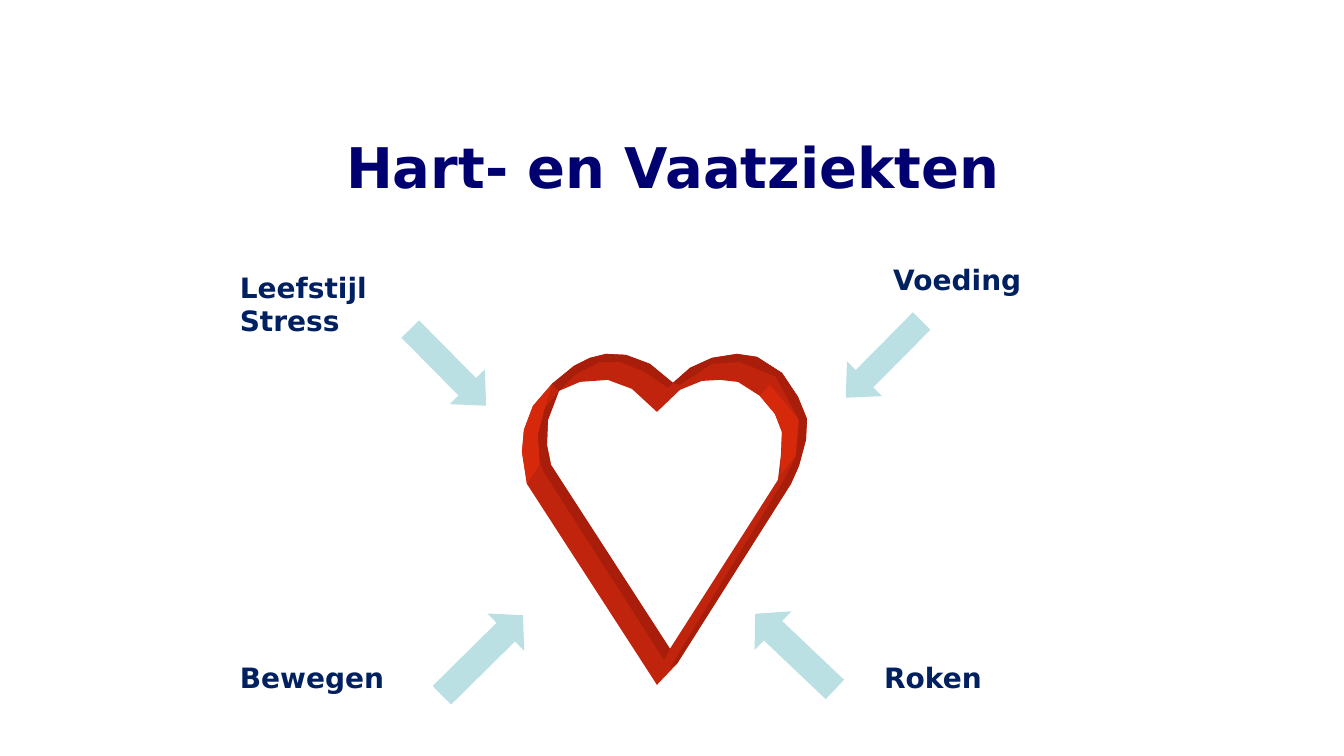
from pptx import Presentation
from pptx.dml.color import RGBColor
from pptx.enum.shapes import MSO_SHAPE
from pptx.enum.text import MSO_ANCHOR, MSO_AUTO_SIZE, PP_ALIGN
from pptx.util import Inches, Pt

deck = Presentation()
deck.slide_width, deck.slide_height = Inches(13.33), Inches(7.5)
CELL = Inches(0.1)  # grid of 133 columns by 75 rows
DOT = deck.slide_width / 1344  # fine grid for the heart
slide = deck.slides.add_slide(deck.slide_layouts[5])


def place(*cells):
    return [round(n * CELL) for n in cells]


def color(hue):
    return RGBColor.from_string(hue)


# Title
title = slide.shapes.title
title.left, title.top, title.width, title.height = place(9.2, 9.7, 115, 14.5)
frame = title.text_frame
frame.text = "Hart- en Vaatziekten"
frame.vertical_anchor = MSO_ANCHOR.MIDDLE
frame.auto_size = MSO_AUTO_SIZE.NONE
para = frame.paragraphs[0]
para.alignment, para.line_spacing = PP_ALIGN.CENTER, 0.9
for key, value in {"name": "DejaVu Sans", "size": Pt(40), "bold": True}.items():
    setattr(para.font, key, value)
para.font.color.rgb = color("000070")

# Heart ring: outer edge and hole, then shaded rims and bright sides
outer = [(657, 685), (527, 484), (522, 452), (524, 430), (533, 406), (552, 384),
         (574, 366), (590, 358), (606, 354), (626, 355), (650, 364), (673, 383),
         (690, 368), (712, 358), (737, 354), (757, 357), (782, 373), (798, 397),
         (807, 419), (806, 440), (799, 466), (791, 484), (677, 664)]
hole = [(670, 649), (551, 465), (547, 445), (548, 420), (559, 391), (580, 382),
        (608, 380), (632, 389), (657, 412), (680, 390), (702, 381), (720, 380),
        (738, 382), (760, 396), (775, 414), (782, 432), (781, 455), (778, 480)]
rims = {
    "left": [(559, 391), (545, 408), (538, 435), (540, 464), (545, 474),
             (664, 660)] + hole[:4],
    "top": outer[5:12] + [(668, 388), (645, 372), (620, 362), (600, 362),
                          (575, 375), (559, 391)],
    "right": outer[11:] + [(670, 668), (784, 480), (796, 456), (799, 420),
                           (776, 377), (740, 362), (712, 364), (680, 385)],
}
sides = {
    "left": outer[1:6] + [(545, 408), (538, 435), (540, 464)],
    "right": [(760, 396), (770, 385), (799, 420), (796, 456), (781, 474),
              (782, 432), (775, 414)],
}
parts = [([outer, hole], "C0240C")]
parts += [([side], "D6290C") for side in sides.values()]
parts += [([rim], "A81E0A") for rim in rims.values()]
for loops, hue in parts:
    pen = slide.shapes.build_freeform(*loops[0][0], scale=DOT)
    pen.add_line_segments(loops[0][1:], close=True)
    for loop in loops[1:]:
        pen.move_to(*loop[0])
        pen.add_line_segments(loop[1:], close=True)
    shape = pen.convert_to_shape()
    shape.shadow.inherit = False
    shape.fill.solid()
    shape.fill.fore_color.rgb = color(hue)
    shape.line.fill.background()

# Arrows towards the heart
RIGHT, LEFT = MSO_SHAPE.RIGHT_ARROW, MSO_SHAPE.LEFT_ARROW
arrows = [
    (RIGHT, (39.1, 34, 10.7, 4.9), 45.3, 0.54),
    (LEFT, (82.3, 33.2, 10.7, 4.9), 314.7, 0.54),
    (RIGHT, (42.2, 62.4, 11.3, 5.2), 315.3, 0.46),
    (LEFT, (73.4, 62, 10.9, 5.3), 43.5, 0.46),
]
for kind, cells, turn, head in arrows:
    arrow = slide.shapes.add_shape(kind, *place(*cells))
    arrow.rotation = turn
    arrow.adjustments[1] = head
    arrow.shadow.inherit = False
    arrow.fill.solid()
    arrow.fill.fore_color.rgb = color("BBE0E3")
    arrow.line.fill.background()

# Risk factors
labels = [
    ("Leefstijl\nStress", (22.8, 26.3, 14.9, 7.7), True),
    ("Voeding", (87.6, 25.6, 15.8, 4.4), True),
    ("Bewegen", (22.8, 65, 16.4, 4.4), False),
    ("Roken", (86.7, 65, 12.4, 4.4), True),
]
for text, cells, wrap in labels:
    frame = slide.shapes.add_textbox(*place(*cells)).text_frame
    frame.text = text
    frame.word_wrap = wrap
    frame.auto_size = MSO_AUTO_SIZE.SHAPE_TO_FIT_TEXT
    for para in frame.paragraphs:
        for key, value in {"name": "DejaVu Sans", "size": Pt(20), "bold": True}.items():
            setattr(para.font, key, value)
        para.font.color.rgb = color("002060")

deck.save("out.pptx")
